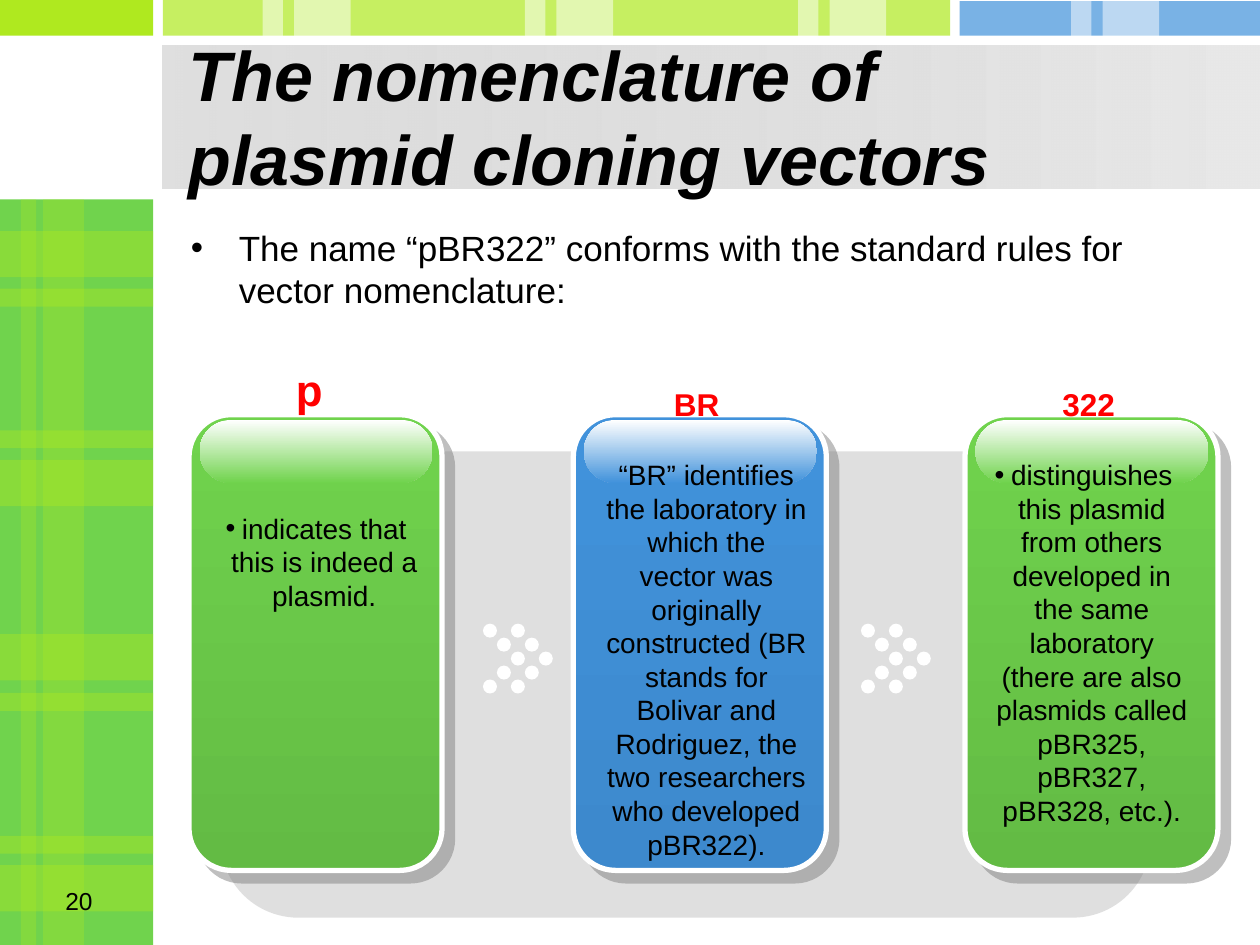
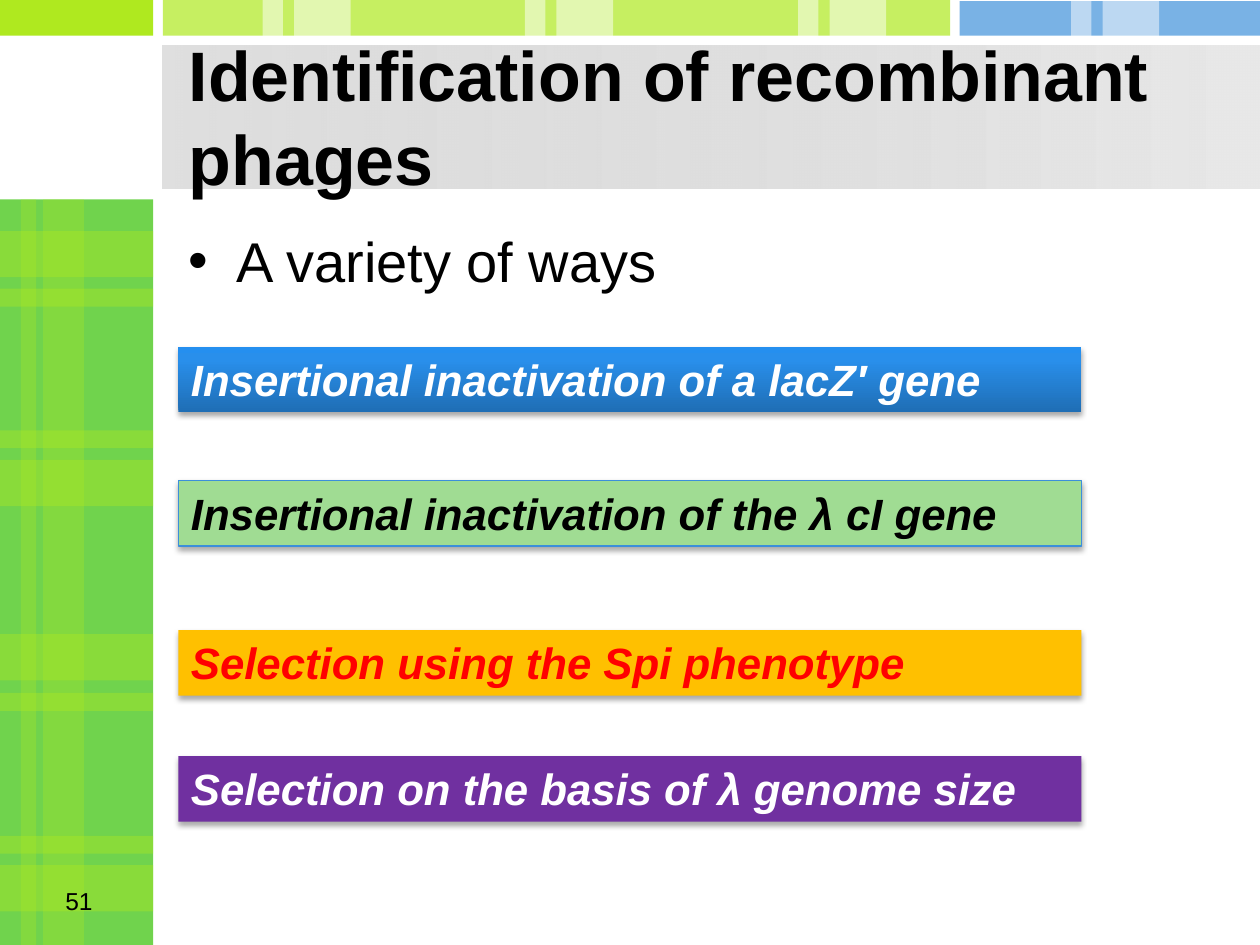
"""Builds two slides on cloning vectors over a shared plaid layout."""
import pptx
import pptx.dml.color
import pptx.enum.shapes
import pptx.enum.text
import pptx.oxml
import pptx.oxml.ns
import pptx.util

RGB = pptx.dml.color.RGBColor
KIND = pptx.enum.shapes.MSO_SHAPE
ALIGN = pptx.enum.text.PP_ALIGN
ANCHOR = pptx.enum.text.MSO_ANCHOR
NS = pptx.oxml.ns.nsdecls("a")

WHITE = RGB(0xFF, 0xFF, 0xFF)
BLACK = RGB(0, 0, 0)
RED = RGB(0xFF, 0, 0)
LIME = RGB(0xAF, 0xE9, 0x1F)
GREEN = RGB(0x70, 0xD3, 0x4D)
LEAF = RGB(0x63, 0xBB, 0x44)
BLUE = RGB(0x41, 0x92, 0xDB)
DEEP_BLUE = RGB(0x3D, 0x89, 0xCD)
SILVER = RGB(0xC0, 0xC0, 0xC0)
PALE_GREY = RGB(0xE8, 0xE8, 0xE8)
GREY = RGB(0x80, 0x80, 0x80)
MINT = RGB(0xA0, 0xDC, 0x93)
EDGE_BLUE = RGB(0x3C, 0x8F, 0xDA)
AMBER = RGB(0xFF, 0xC0, 0x00)
PURPLE = RGB(0x70, 0x30, 0xA0)
NAVY = RGB(0x1F, 0x6E, 0xB5)
SKY = RGB(0x29, 0x8F, 0xEB)
AZURE = RGB(0x25, 0x8F, 0xEF)

COLUMNS, ROWS = 120, 90
SIDEBAR = 14.6
MAIN_LEFT = 15.5
CARD_SHADOW = (GREY, 50, 0, 8.5, 45)
BAR_SHADOW = (BLACK, 35, 3.1, 1.8, 90)


def tint(color, alpha=100):
    """Return the XML of a colour with an opacity in percent."""
    return f'<a:srgbClr {NS} val="{color}"><a:alpha val="{alpha * 1000}"/></a:srgbClr>'


class Deck:
    """Holds the style, the grid and the current slide."""

    def __init__(self):
        self.file = pptx.Presentation()
        self.file.slide_width = pptx.util.Inches(10)
        self.file.slide_height = pptx.util.Inches(7.5)
        self.slide = None

    def place(self, left, top, width, height):
        """Turn grid columns and rows into slide lengths."""
        column = self.file.slide_width / COLUMNS
        row = self.file.slide_height / ROWS
        return [round(left * column), round(top * row),
                round(width * column), round(height * row)]

    def shape(self, box, color, alpha=100, kind=KIND.RECTANGLE, round_by=None,
              stops=None, angle=0, line=None, shadow=None):
        """Add a shape with a solid or gradient fill."""
        shape = self.slide.shapes.add_shape(kind, *self.place(*box))
        if round_by is not None:
            shape.adjustments[0] = round_by
        shape.shadow.inherit = False
        if stops:
            self.gradient(shape, stops, angle)
        else:
            shape.fill.solid()
            shape.fill.fore_color.rgb = color
            if alpha < 100:
                fill = shape._element.spPr.find(pptx.oxml.ns.qn("a:solidFill"))
                fill.replace(fill[0], pptx.oxml.parse_xml(tint(color, alpha)))
        if line:
            shape.line.color.rgb = line[0]
            shape.line.width = pptx.util.Pt(line[1])
        else:
            shape.line.fill.background()
        if shadow:
            self.cast(shape, *shadow)
        return shape

    def gradient(self, shape, stops, angle):
        """Fill a shape with (position, colour, opacity) stops."""
        marks = "".join(f'<a:gs pos="{at * 1000}">{tint(color, alpha)}</a:gs>'
                        for at, color, alpha in stops)
        shape.fill.background()
        properties = shape._element.spPr
        properties.replace(
            properties.find(pptx.oxml.ns.qn("a:noFill")),
            pptx.oxml.parse_xml(
                f'<a:gradFill {NS} rotWithShape="1"><a:gsLst>{marks}</a:gsLst>'
                f'<a:lin ang="{angle * 60000}" scaled="1"/></a:gradFill>'))

    def cast(self, shape, color, alpha, blur, distance, angle):
        """Give a shape an outer shadow."""
        effects = shape._element.spPr.find(pptx.oxml.ns.qn("a:effectLst"))
        effects.append(pptx.oxml.parse_xml(
            f'<a:outerShdw {NS} blurRad="{pptx.util.Pt(blur)}" '
            f'dist="{pptx.util.Pt(distance)}" dir="{angle * 60000}" algn="ctr" '
            f'rotWithShape="0">{tint(color, alpha)}</a:outerShdw>'))

    def letter(self, frame, words, size, color=BLACK, bold=False, italic=False,
               align=ALIGN.LEFT, anchor=ANCHOR.TOP, indent=0, bullet=False, wrap=True):
        """Set one paragraph in a text frame."""
        frame.word_wrap = wrap
        if not wrap:
            frame.auto_size = pptx.enum.text.MSO_AUTO_SIZE.SHAPE_TO_FIT_TEXT
        frame.vertical_anchor = anchor
        paragraph = frame.paragraphs[0]
        paragraph.alignment = align
        if indent:
            hang = pptx.util.Inches(indent)
            properties = paragraph._p.get_or_add_pPr()
            properties.set("marL", str(hang))
            properties.set("indent", str(-hang if bullet else 0))
            if bullet:
                properties.append(pptx.oxml.parse_xml(f'<a:buFont {NS} typeface="Arial"/>'))
                properties.append(pptx.oxml.parse_xml(f'<a:buChar {NS} char="•"/>'))
        run = paragraph.add_run()
        run.text = words
        run.font.name = "Arial"
        run.font.size = pptx.util.Pt(size)
        run.font.color.rgb = color
        run.font.bold = bold
        run.font.italic = italic

    def text(self, box, words, size, **style):
        """Add a text box with one paragraph."""
        holder = self.slide.shapes.add_textbox(*self.place(*box))
        self.letter(holder.text_frame, words, size, **style)

    def plaid(self):
        """Draw the sidebar, the top bands and the title band."""
        self.shape((0, 19, SIDEBAR, 71), GREEN)
        self.shape((0, 0, SIDEBAR, 3.4), LIME)
        for left, width in ((2, 1.45), (4.1, 3.9)):
            self.shape((left, 19, width, 71), LIME, 30)
        for top, thin_offset in ((22, 5.5), (43.8, -2.8), (60.4, 5.6), (82.4, -2.8)):
            self.shape((0, top, SIDEBAR, 4.4), LIME, 40)
            self.shape((0, top + thin_offset, SIDEBAR, 1.7), LIME, 40)
        self.shape((MAIN_LEFT, 0, 75, 3.4), LIME, 70)
        self.shape((91.4, 0.1, 28.6, 3.3), BLUE, 70)
        for left in (25, 50, 76, 102):
            self.shape((left, 0, 1.95, 3.7), WHITE, 50)
            self.shape((left + 3, 0, 5.4, 3.7), WHITE, 50)
        self.shape((MAIN_LEFT, 4.3, COLUMNS - MAIN_LEFT, 13.7), None,
                   stops=((0, SILVER, 50), (100, PALE_GREY, 100)))

    def start(self, title, number, title_width, italic=False):
        """Begin a slide with its plaid, title and number."""
        self.slide = self.file.slides.add_slide(self.file.slide_layouts[6])
        self.plaid()
        self.text((16.8, 6, title_width, 10), title, 40, bold=True, italic=italic,
                  anchor=ANCHOR.MIDDLE)
        self.text((4, 83.8, 6, 6.2), number, 14, align=ALIGN.RIGHT)

    def card(self, left, color, foot):
        """Draw a glossy rounded card."""
        self.shape((left, 39.5, 24.1, 43.4), None, kind=KIND.ROUNDED_RECTANGLE,
                   round_by=0.167, stops=((0, color, 100), (100, foot, 100)), angle=90,
                   line=(WHITE, 3), shadow=CARD_SHADOW)
        self.shape((left + 1, 40, 22.2, 6), None, kind=KIND.ROUNDED_RECTANGLE,
                   round_by=0.5, stops=((0, WHITE, 100), (100, color, 100)), angle=90)

    def dotted_arrow(self, left, top=59.4, pitch=1.33):
        """Draw a double chevron of dots."""
        for start in (0, 2):
            for row, step in enumerate((0, 1, 2, 1, 0)):
                self.shape((left + (start + step) * pitch, top + row * pitch, pitch, pitch),
                           WHITE, kind=KIND.OVAL)

    def bar(self, top, words, color, ink=WHITE, **look):
        """Add a labelled bar."""
        bar = self.shape((17, top, 86, 6.25), color, shadow=BAR_SHADOW, **look)
        self.letter(bar.text_frame, words, 25, color=ink, bold=True, italic=True)


def nomenclature(deck):
    """Build the slide on vector names."""
    deck.start("The nomenclature of plasmid cloning vectors", "20", 85.2, italic=True)
    deck.text((17, 21, 99, 11),
              "The name “pBR322” conforms with the standard rules for vector nomenclature:",
              20, indent=0.38, bullet=True)
    deck.shape((21, 43, 88.6, 44.4), SILVER, 50, kind=KIND.ROUNDED_RECTANGLE, round_by=0.167)
    for left, color, foot in ((18, GREEN, LEAF), (54.6, BLUE, DEEP_BLUE), (91.9, GREEN, LEAF)):
        deck.card(left, color, foot)
    meanings = (
        ((18.6, 48.1, 23, 11), "indicates that this is indeed a plasmid.", True),
        ((55, 43, 23, 40),
         "“BR” identifies the laboratory in which the vector was originally constructed "
         "(BR stands for Bolivar and Rodriguez, the two researchers who developed pBR322).",
         False),
        ((91.7, 43, 23, 36.7),
         "distinguishes this plasmid from others developed in the same laboratory "
         "(there are also plasmids called pBR325, pBR327, pBR328, etc.).", True),
    )
    for box, meaning, bullet in meanings:
        deck.text(box, meaning, 16, align=ALIGN.CENTER, indent=0.13, bullet=bullet)
    for left in (46, 82):
        deck.dotted_arrow(left)
    for box, part, size in (((27, 34, 5, 6.2), "p", 25), ((63, 36.1, 6.8, 4.8), "BR", 18),
                            ((100, 36.1, 7.4, 4.8), "322", 18)):
        deck.text(box, part, size, color=RED, bold=True, wrap=False)


def identification(deck):
    """Build the slide on recombinant phages."""
    deck.start("Identification of recombinant phages", "51", 101.3)
    deck.text((16.8, 21, 97.2, 9), "A variety of ways", 32, indent=0.38, bullet=True)
    deck.bar(33, "Insertional inactivation of a lacZ′ gene", None, angle=270,
             stops=((0, NAVY, 100), (80, SKY, 100), (100, AZURE, 100)))
    deck.bar(45.75, "Insertional inactivation of the λ cI gene", MINT, BLACK,
             line=(EDGE_BLUE, 0.75))
    deck.bar(60, "Selection using the Spi phenotype", AMBER, RED)
    deck.bar(72, "Selection on the basis of λ genome size", PURPLE)


def main():
    """Build and save the deck."""
    deck = Deck()
    nomenclature(deck)
    identification(deck)
    deck.file.save("out.pptx")


if __name__ == "__main__":
    main()
